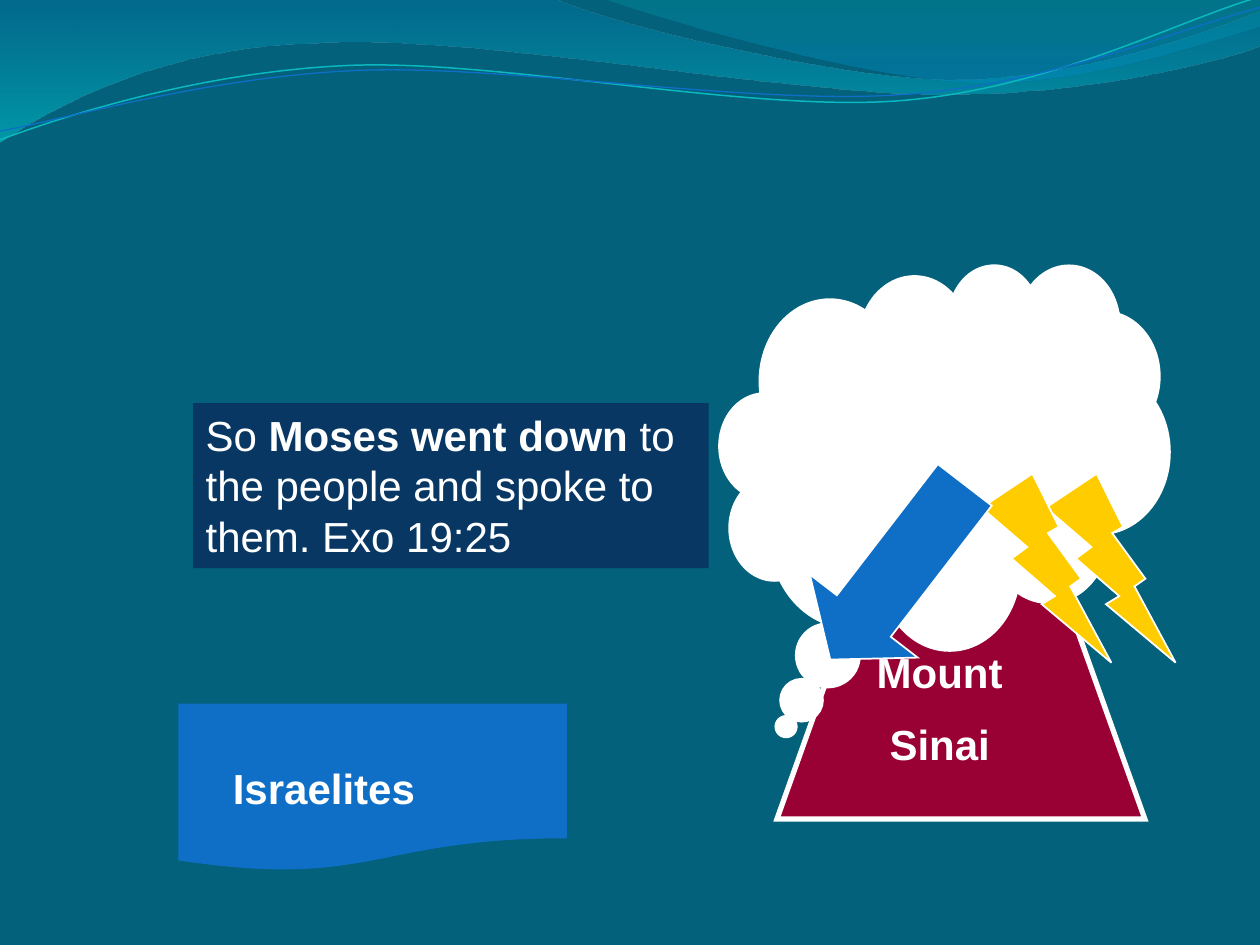
"""Build a slide of Moses going down from Mount Sinai to the Israelites."""
import math
from lxml import etree
from pptx import Presentation
from pptx.dml.color import RGBColor
from pptx.enum import shapes, text
from pptx.oxml import ns
from pptx.util import Pt

M = shapes.MSO_SHAPE
COLORS = {
    "ground": "04617B", "white": "FFFFFF", "navy": "083763", "blue": "0F6FC6",
    "maroon": "990033", "gold": "FFCC00", "teal": "0AB8BF",
    "band_top": "0074A1", "band_end": "00C6CF",
    "corner_top": "00A1A9", "corner_end": "008BBF",
}
FONT = {"name": "Arial", "size": Pt(24)}
TILT = 357.3

# Each segment holds one point (straight) or three (Bezier curve).
BANDS = [
    {"start": (0, 0), "segments": [
        [(316.8, -0.7)],
        [(342.7, 12.2), (478.1, 45.4), (545.8, 45.4)],
        [(614.2, 45.4), (689.8, 18.7), (720, 6.5)],
        [(720.7, 25.9)],
        [(707.8, 31.7), (626.4, 54.7), (537.1, 54)],
        [(447.8, 54), (275, 20.2), (185, 24.5)],
        [(92.9, 25.9), (33.1, 59.8), (-0.7, 81.4)],
        [(0, 0)]],
     "stops": [(0, "band_top", 45), (1, "band_end", 55)]},
    {"start": (344.9, -0.7), "segments": [
        [(366.5, 7.9), (491, 44.6), (553.7, 46.8)],
        [(616.3, 49.7), (691.9, 23), (720, 15.1)],
        [(720, 0)]],
     "stops": [(0, "corner_top", 30), (0.8, "corner_end", 45)]},
]
WAVES = [
    {"start": (0, 79.9), "segments": [
        [(34.6, 67), (113.8, 41), (199.4, 37.4)],
        [(284.4, 33.8), (427, 64.1), (513.4, 57.6)],
        [(599.8, 51.1), (675.4, 10.8), (718.6, -1.4)]],
     "line": ("teal", 0.85), "center": (359.3, 41.4)},
    {"start": (0, 74.9), "segments": [
        [(33.8, 69.1), (118.1, 43.9), (203.8, 40.3)],
        [(290.2, 36.7), (429.8, 60.5), (516.2, 54)],
        [(601.9, 48.2), (677.5, 15.1), (720, 4.3)]],
     "line": ("blue", 0.75), "center": (359.6, 42.5)},
]

THIN = ("white", 1)
BOLT = (74.2, 108)
MOUNTAIN = [
    (M.ISOSCELES_TRIANGLE, (444, 174, 210.2, 294), "maroon", ("white", 3), [0.5], 0),
    (M.FLOWCHART_DOCUMENT, (102, 402, 222, 96), "blue", None, [], 0),
]
LABELS = [
    ((126, 432, 180, 36), ["Israelites"], text.PP_ALIGN.LEFT),
    ((480, 366, 114, 79.2), ["Mount", "Sinai"], text.PP_ALIGN.CENTER),
]
VERSE_BOX = (M.RECTANGLE, (110.4, 230.4, 294.6, 94.3), "navy", None, [], 0)
VERSE = [("So ", False), ("Moses went down", True),
         (" to the people and spoke to them. Exo 19:25", False)]
STORM = [
    (M.CLOUD_CALLOUT, (411.1, 150.9, 257.3, 220.3), "white", THIN, [-0.352, 0.7], 0),
    *[(M.LIGHTNING_BOLT, (x, 270.7, *BOLT), "gold", THIN, [], 0) for x in (597.6, 560.9)],
    (M.UP_ARROW, (474, 264, 77.8, 126), "blue", THIN, [0.5, 0.404], 217.6),
]


def rgb(name):
    return RGBColor.from_string(COLORS[name])


def set_line(sp, line):
    if line is None:
        sp.line.fill.background()
        return
    sp.line.color.rgb = rgb(line[0])
    sp.line.width = Pt(line[1])
    etree.SubElement(sp.line._ln, ns.qn("a:miter"), lim="800000")


def untilt(point, center):
    angle = math.radians(-TILT)
    dx, dy = (a - b for a, b in zip(point, center))
    return (center[0] + dx * math.cos(angle) - dy * math.sin(angle),
            center[1] + dx * math.sin(angle) + dy * math.cos(angle))


def bend(sp, segments):
    steps = iter(list(sp._element.iter(ns.qn("a:lnTo"))))
    for segment in segments:
        nodes = [next(steps) for _ in segment]
        if len(nodes) == 3:
            curve = etree.Element(ns.qn("a:cubicBezTo"))
            nodes[0].addprevious(curve)
            for node in nodes:
                curve.append(node[0])
                node.getparent().remove(node)


def add_curve(slide, start, segments, stops=None, line=None, center=None):
    points = [start, *(p for segment in segments for p in segment)]
    if center:
        points = [untilt(p, center) for p in points]
    first, *rest = [(Pt(x), Pt(y)) for x, y in points]
    builder = slide.shapes.build_freeform(*first, scale=1.0)
    builder.add_line_segments(rest, close=stops is not None)
    sp = builder.convert_to_shape()
    bend(sp, segments)
    sp.rotation = TILT if center else 0
    sp.shadow.inherit = False
    set_line(sp, line)
    if stops is None:
        sp.fill.background()
        return
    sp.fill.gradient()
    sp.fill.gradient_angle = 270
    for stop, (position, color, _) in zip(sp.fill.gradient_stops, stops):
        stop.position = position
        stop.color.rgb = rgb(color)
    colors = sp._element.spPr.iterfind(".//" + ns.qn("a:srgbClr"))
    for node, (_, _, opacity) in zip(colors, stops):
        etree.SubElement(node, ns.qn("a:alpha"), val=str(opacity * 1000))


def add_shape(slide, kind, box, fill, line, adjustments, rotation):
    sp = slide.shapes.add_shape(kind, *map(Pt, box))
    sp.shadow.inherit = False
    sp.fill.solid()
    sp.fill.fore_color.rgb = rgb(fill)
    set_line(sp, line)
    for i, value in enumerate(adjustments):
        sp.adjustments[i] = value
    sp.rotation = rotation
    return sp


def set_frame(tf):
    frame = {"word_wrap": True, "vertical_anchor": text.MSO_ANCHOR.TOP,
             "auto_size": text.MSO_AUTO_SIZE.SHAPE_TO_FIT_TEXT}
    for key, value in frame.items():
        setattr(tf, key, value)


def add_run(p, words, bold):
    r = p.add_run()
    r.text = words
    for key, value in {**FONT, "bold": bold}.items():
        setattr(r.font, key, value)
    r.font.color.rgb = rgb("white")


def add_label(slide, box, lines, align):
    tf = slide.shapes.add_textbox(*map(Pt, box)).text_frame
    set_frame(tf)
    for i, words in enumerate(lines):
        p = tf.add_paragraph() if i else tf.paragraphs[0]
        p.alignment = align
        p.space_before = Pt(12.5 if i else 0)
        add_run(p, words, True)


def main():
    prs = Presentation()
    prs.slide_width, prs.slide_height = Pt(720), Pt(540)
    slide = prs.slides.add_slide(prs.slide_layouts[6])
    slide.background.fill.solid()
    slide.background.fill.fore_color.rgb = rgb("ground")
    for curve in BANDS + WAVES:
        add_curve(slide, **curve)
    for item in MOUNTAIN:
        add_shape(slide, *item)
    for label in LABELS:
        add_label(slide, *label)
    tf = add_shape(slide, *VERSE_BOX).text_frame
    set_frame(tf)
    p = tf.paragraphs[0]
    p.alignment = text.PP_ALIGN.LEFT
    for words, bold in VERSE:
        add_run(p, words, bold)
    for item in STORM:
        add_shape(slide, *item)
    prs.save("out.pptx")


if __name__ == "__main__":
    main()
